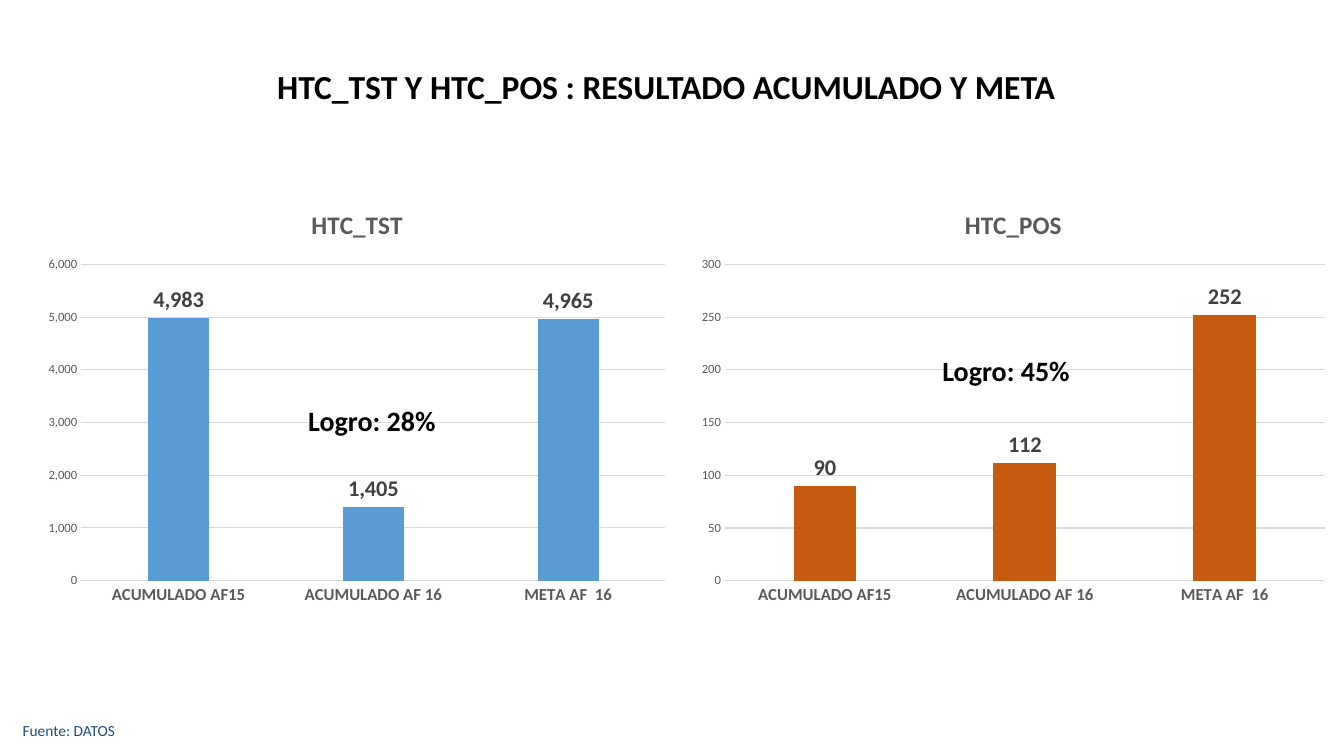
from dataclasses import dataclass

from pptx import Presentation
from pptx.chart.data import CategoryChartData
from pptx.dml.color import RGBColor
from pptx.enum.chart import XL_CHART_TYPE as ChartType
from pptx.enum.chart import XL_LABEL_POSITION as LabelPosition
from pptx.enum.chart import XL_TICK_MARK as TickMark
from pptx.enum.text import MSO_AUTO_SIZE as AutoSize
from pptx.enum.text import PP_ALIGN as Align
from pptx.slide import Slide
from pptx.util import Emu, Pt

EMU_PER_PX = 9525
FONT = "Calibri"
BLACK = RGBColor(0x00, 0x00, 0x00)
NAVY = RGBColor(0x1F, 0x4E, 0x79)
BLUE = RGBColor(0x5B, 0x9B, 0xD5)
ORANGE = RGBColor(0xC5, 0x5A, 0x11)
DARK_GRAY = RGBColor(0x40, 0x40, 0x40)
GRAY = RGBColor(0x59, 0x59, 0x59)
LIGHT_GRAY = RGBColor(0xD9, 0xD9, 0xD9)

CATEGORIES = ("ACUMULADO AF15", "ACUMULADO AF 16", "META AF  16")
CHART_TOP, CHART_HEIGHT = 180, 404


@dataclass(frozen=True)
class Box:
    left: int
    top: int
    width: int
    height: int

    def emu(self) -> tuple[Emu, ...]:
        return tuple(px(side) for side in (self.left, self.top, self.width, self.height))


@dataclass(frozen=True)
class Indicator:
    name: str
    values: tuple[int, ...]
    color: RGBColor
    number_format: str
    axis_maximum: int
    axis_step: int
    left: int
    width: int
    achievement: str
    achievement_box: Box


INDICATORS = (
    Indicator("HTC_TST", (4983, 1405, 4965), BLUE, "#,##0", 6000, 1000,
              34, 612, "Logro: 28%", Box(284, 380, 141, 42)),
    Indicator("HTC_POS", (90, 112, 252), ORANGE, "General", 300, 50,
              656, 618, "Logro: 45%", Box(888, 332, 141, 42)),
)


def px(length: int) -> Emu:
    return Emu(length * EMU_PER_PX)


def style_font(font, size: int, color: RGBColor, bold: bool = False) -> None:
    font.name = FONT
    font.size = Pt(size)
    font.bold = bold
    font.color.rgb = color


def style_line(line, color: RGBColor) -> None:
    line.color.rgb = color
    line.width = Pt(0.75)


def add_text(slide: Slide, text: str, box: Box, *, size: int, color: RGBColor = BLACK,
             bold: bool = False, align: Align = Align.LEFT) -> None:
    frame = slide.shapes.add_textbox(*box.emu()).text_frame
    frame.word_wrap = True
    frame.auto_size = AutoSize.SHAPE_TO_FIT_TEXT
    paragraph = frame.paragraphs[0]
    paragraph.alignment = align
    run = paragraph.add_run()
    run.text = text
    style_font(run.font, size, color, bold)


def add_indicator_chart(slide: Slide, indicator: Indicator) -> None:
    data = CategoryChartData(number_format=indicator.number_format)
    data.categories = CATEGORIES
    data.add_series(indicator.name, indicator.values)
    box = Box(indicator.left, CHART_TOP, indicator.width, CHART_HEIGHT)
    chart = slide.shapes.add_chart(ChartType.COLUMN_CLUSTERED, *box.emu(), data).chart
    style_font(chart.font, 10, BLACK)
    chart.has_legend = False

    chart.has_title = True
    chart.chart_title.include_in_layout = False
    title_run = chart.chart_title.text_frame.paragraphs[0].add_run()
    title_run.text = indicator.name
    style_font(title_run.font, 18, GRAY, bold=True)

    category_axis = chart.category_axis
    category_axis.major_tick_mark = TickMark.NONE
    style_font(category_axis.tick_labels.font, 12, GRAY, bold=True)
    style_line(category_axis.format.line, LIGHT_GRAY)

    value_axis = chart.value_axis
    value_axis.minimum_scale = 0
    value_axis.maximum_scale = indicator.axis_maximum
    value_axis.major_unit = indicator.axis_step
    value_axis.major_tick_mark = TickMark.NONE
    value_axis.format.line.fill.background()
    style_line(value_axis.major_gridlines.format.line, LIGHT_GRAY)
    style_font(value_axis.tick_labels.font, 9, GRAY)
    value_axis.tick_labels.number_format = indicator.number_format
    value_axis.tick_labels.number_format_is_linked = False

    plot = chart.plots[0]
    plot.vary_by_categories = False
    plot.gap_width = 219
    plot.overlap = -27
    series = plot.series[0]
    series.format.fill.solid()
    series.format.fill.fore_color.rgb = indicator.color
    labels = series.data_labels
    labels.show_value = True
    labels.position = LabelPosition.OUTSIDE_END
    labels.number_format = indicator.number_format
    labels.number_format_is_linked = False
    style_font(labels.font, 16, DARK_GRAY, bold=True)


def main() -> None:
    presentation = Presentation()
    presentation.slide_width = px(1280)
    presentation.slide_height = px(720)
    slide = presentation.slides.add_slide(presentation.slide_layouts[6])

    add_text(slide, "HTC_TST Y HTC_POS : RESULTADO ACUMULADO Y META",
             Box(230, 58, 809, 48), size=24, bold=True, align=Align.CENTER)
    for indicator in INDICATORS:
        add_indicator_chart(slide, indicator)
    add_text(slide, "Fuente: DATOS", Box(12, 682, 219, 38), size=11, color=NAVY)
    for indicator in INDICATORS:
        add_text(slide, indicator.achievement, indicator.achievement_box, size=20, bold=True)

    presentation.save("out.pptx")


if __name__ == "__main__":
    main()
